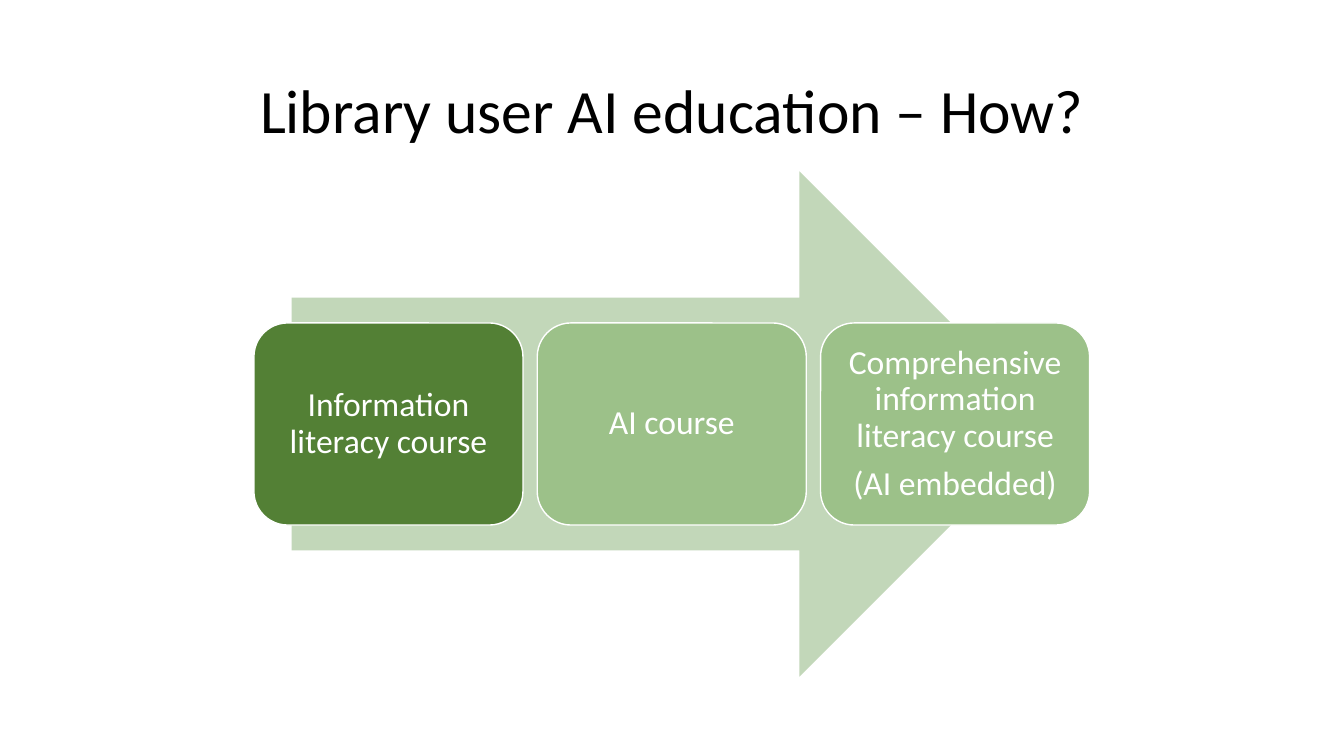
from pptx import Presentation
from pptx.dml.color import RGBColor
from pptx.enum.shapes import MSO_SHAPE
from pptx.enum.text import MSO_ANCHOR, PP_ALIGN
from pptx.util import Cm, Pt

ARROW = MSO_SHAPE.RIGHT_ARROW
ROUNDED = MSO_SHAPE.ROUNDED_RECTANGLE
CENTER = PP_ALIGN.CENTER
MIDDLE = MSO_ANCHOR.MIDDLE
TITLE_ONLY = 5

COLORS = {
    "black": "000000",
    "white": "FFFFFF",
    "arrow": "C2D7B9",
    "first": "538035",
    "later": "9CC189",
}

STEPS = [
    (["Information literacy course"], "first"),
    (["AI course"], "later"),
    (["Comprehensive information literacy course", "(AI embedded)"], "later"),
]


def color(name):
    return RGBColor.from_string(COLORS[name])


def write_text(shape, lines, size, ink, inset=0.25, space_after=0):
    frame = shape.text_frame
    frame.word_wrap = True
    frame.vertical_anchor = MIDDLE
    frame.margin_left = frame.margin_right = Cm(inset)
    frame.margin_top = frame.margin_bottom = Cm(inset)
    for index, line in enumerate(lines):
        para = frame.paragraphs[0] if index == 0 else frame.add_paragraph()
        para.alignment = CENTER
        para.line_spacing = 0.9
        para.space_before = Pt(0)
        para.space_after = Pt(space_after)
        span = para.add_run()
        span.text = line
        span.font.size = Pt(size)
        span.font.name = "Calibri"
        span.font.color.rgb = color(ink)


def add_filled(page, kind, left, top, width, height, fill):
    shape = page.shapes.add_shape(kind, Cm(left), Cm(top), Cm(width), Cm(height))
    shape.shadow.inherit = False
    shape.fill.solid()
    shape.fill.fore_color.rgb = color(fill)
    shape.line.fill.background()
    return shape


def place_title(page, left, top, width, height):
    title = page.shapes.title
    title.left, title.top = Cm(left), Cm(top)
    title.width, title.height = Cm(width), Cm(height)
    write_text(title, ["Library user AI education – How?"], 44, "black")


def draw_process(page, left, top, width, height):
    arrow_width = width * 0.91
    arrow_left = left + (width - arrow_width) / 2
    add_filled(page, ARROW, arrow_left, top, arrow_width, height, "arrow")

    gap = 0.36
    box_width = (width - gap * (len(STEPS) - 1)) / len(STEPS)
    box_height = height * 0.4
    box_top = top + (height - box_height) / 2
    for index, (lines, fill) in enumerate(STEPS):
        box_left = left + index * (box_width + gap)
        box = add_filled(page, ROUNDED, box_left, box_top, box_width, box_height, fill)
        box.line.color.rgb = color("white")
        box.line.width = Pt(1)
        write_text(box, lines, 24, "white", inset=0.2, space_after=8.4)


def main():
    deck = Presentation()
    deck.slide_width, deck.slide_height = Cm(33.87), Cm(19.05)
    page = deck.slides.add_slide(deck.slide_layouts[TITLE_ONLY])
    place_title(page, 2.34, 1.02, 29.21, 3.68)
    draw_process(page, 6.4, 4.32, 21.06, 12.73)
    deck.save("out.pptx")


if __name__ == "__main__":
    main()
